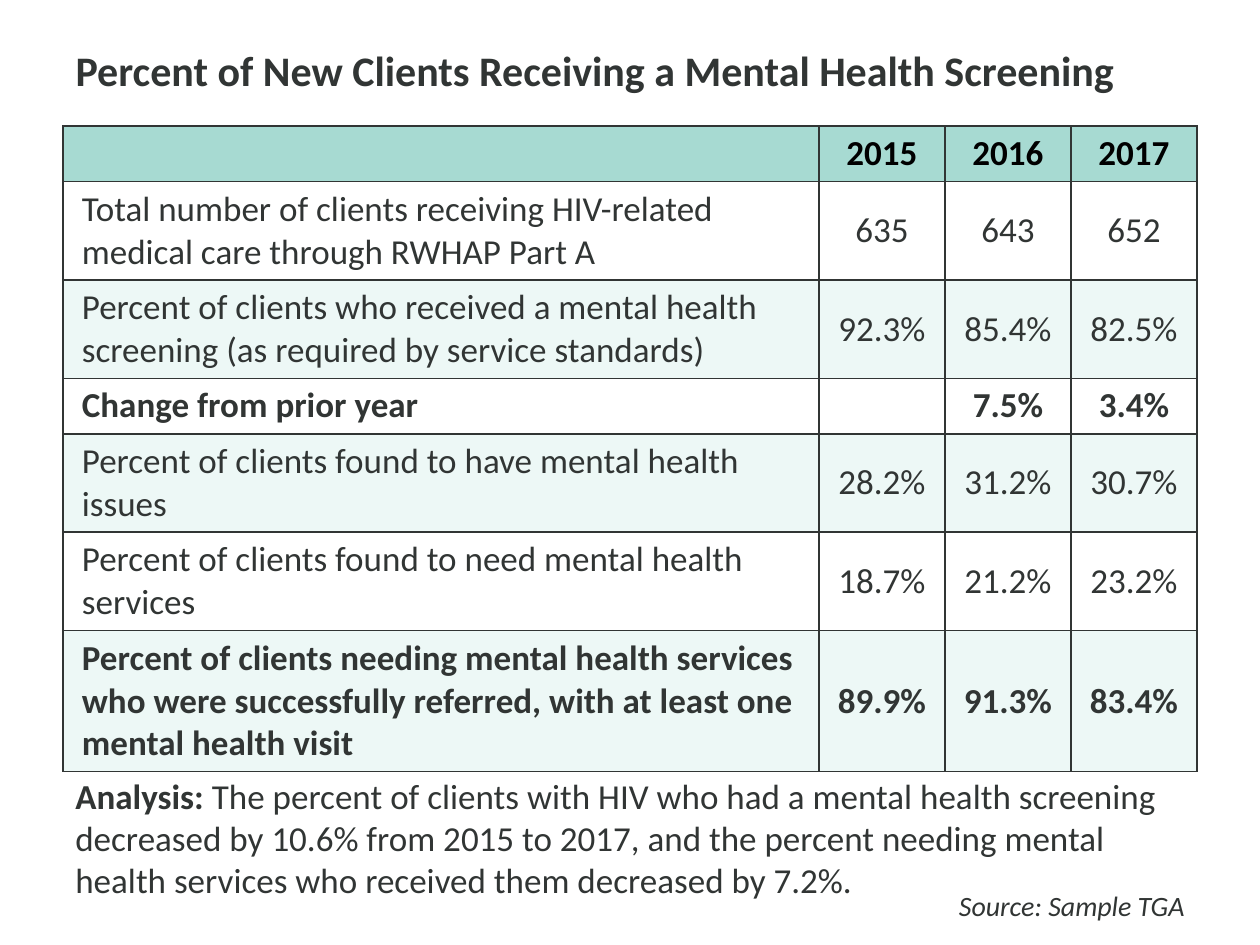
from lxml import etree
from pptx import Presentation
from pptx.dml.color import RGBColor
from pptx.enum.text import MSO_ANCHOR, PP_ALIGN
from pptx.oxml.ns import qn
from pptx.util import Inches, Pt

LEFT, CENTER, RIGHT = PP_ALIGN.LEFT, PP_ALIGN.CENTER, PP_ALIGN.RIGHT
TOP, MIDDLE, BOTTOM = MSO_ANCHOR.TOP, MSO_ANCHOR.MIDDLE, MSO_ANCHOR.BOTTOM
COLORS = {"ink": "313534", "header_ink": "000000", "header": "A7DAD2",
          "odd": "FFFFFF", "even": "EDF8F6"}
MARGIN, COLUMN = 0.5, 1
LABEL_COLUMNS, YEAR_COLUMNS = 6, 3
CONTENT_WIDTH = (LABEL_COLUMNS + YEAR_COLUMNS) * COLUMN
CELL_INSET, LINE_HEIGHT = 0.05, 0.34


def write(paragraph, text, size=20, color="ink", bold=False, italic=False, align=LEFT):
    paragraph.alignment = align
    run = paragraph.add_run()
    run.text = text
    run.font.name = "Calibri"
    run.font.size = Pt(size)
    run.font.bold = bold
    run.font.italic = italic
    run.font.color.rgb = RGBColor.from_string(COLORS[color])


def add_borders(cell):
    properties = cell._tc.get_or_add_tcPr()
    for position, side in enumerate(("a:lnL", "a:lnR", "a:lnT", "a:lnB")):
        border = etree.Element(qn(side), w=str(Pt(1)))
        fill = etree.SubElement(border, qn("a:solidFill"))
        etree.SubElement(fill, qn("a:srgbClr"), val=COLORS["ink"])
        properties.insert(position, border)


presentation = Presentation()
presentation.slide_width = Inches(10)
presentation.slide_height = Inches(7.5)
slide = presentation.slides.add_slide(presentation.slide_layouts[5])

title = slide.shapes.title
title.left, title.top = Inches(MARGIN), Inches(0.3)
title.width, title.height = Inches(CONTENT_WIDTH), Inches(0.62)
title.text_frame.vertical_anchor = TOP
write(title.text_frame.paragraphs[0],
      "Percent of New Clients Receiving a Mental Health Screening", size=24, bold=True)

screening_rows = [
    (1, True, ["", "2015", "2016", "2017"]),
    (2, False, ["Total number of clients receiving HIV-related medical care through RWHAP Part A",
                "635", "643", "652"]),
    (2, False, ["Percent of clients who received a mental health screening "
                "(as required by service standards)", "92.3%", "85.4%", "82.5%"]),
    (1, True, ["Change from prior year", "", "7.5%", "3.4%"]),
    (2, False, ["Percent of clients found to have mental health issues",
                "28.2%", "31.2%", "30.7%"]),
    (2, False, ["Percent of clients found to need mental health services",
                "18.7%", "21.2%", "23.2%"]),
    (3, True, ["Percent of clients needing mental health services who were successfully "
               "referred, with at least one mental health visit", "89.9%", "91.3%", "83.4%"]),
]
row_heights = [2 * CELL_INSET + lines * LINE_HEIGHT for lines, _, _ in screening_rows]
screening = slide.shapes.add_table(
    len(screening_rows), 1 + YEAR_COLUMNS, Inches(MARGIN), Inches(1),
    Inches(CONTENT_WIDTH), Inches(sum(row_heights))).table
for column, span in enumerate([LABEL_COLUMNS] + [1] * YEAR_COLUMNS):
    screening.columns[column].width = Inches(span * COLUMN)

for row, (_, bold, values) in enumerate(screening_rows):
    screening.rows[row].height = Inches(row_heights[row])
    band = "header" if row == 0 else ("even" if row % 2 == 0 else "odd")
    for column, value in enumerate(values):
        cell = screening.cell(row, column)
        cell.fill.solid()
        cell.fill.fore_color.rgb = RGBColor.from_string(COLORS[band])
        cell.margin_left = cell.margin_right = Inches(CELL_INSET)
        cell.margin_top = cell.margin_bottom = Inches(CELL_INSET)
        cell.vertical_anchor = BOTTOM if row == 0 else MIDDLE
        add_borders(cell)
        paragraph = cell.text_frame.paragraphs[0]
        if value:
            write(paragraph, value, bold=bold, align=CENTER if column else LEFT,
                  color="ink" if row else "header_ink")
        if column == 0:
            paragraph._p.get_or_add_pPr().set("marL", str(Inches(0.1)))

notes = [
    (6.1, 1.11, [("Analysis: ", {"bold": True}),
                 ("The percent of clients with HIV who had a mental health screening decreased "
                  "by 10.6% from 2015 to 2017, and the percent needing mental health services "
                  "who received them decreased by 7.2%.", {})]),
    (7, 0.37, [("Source: Sample TGA", {"size": 16, "italic": True, "align": RIGHT})]),
]
for top, height, pieces in notes:
    frame = slide.shapes.add_textbox(Inches(MARGIN), Inches(top),
                                     Inches(CONTENT_WIDTH), Inches(height)).text_frame
    frame.word_wrap = True
    for text, style in pieces:
        write(frame.paragraphs[0], text, **style)

presentation.save("out.pptx")
